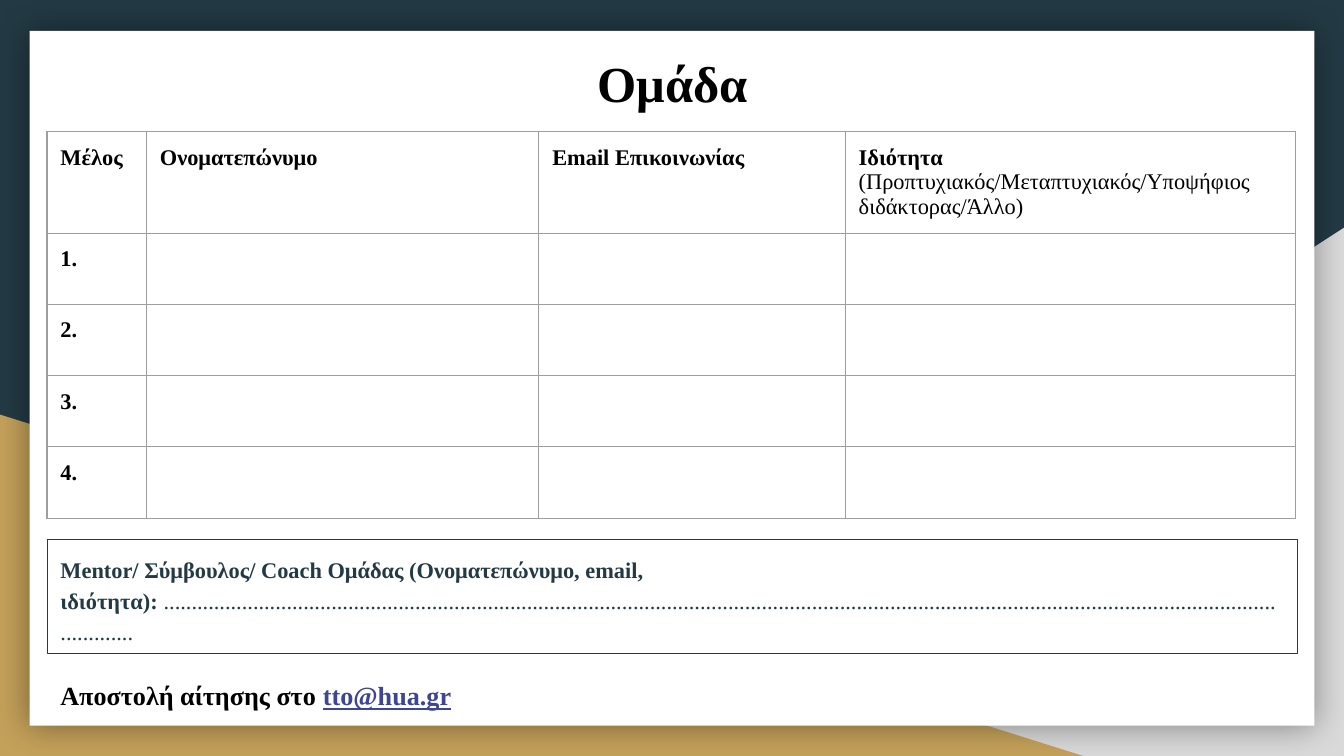
from lxml.etree import SubElement
from pptx import Presentation
from pptx.dml.color import RGBColor
from pptx.enum.shapes import MSO_SHAPE as Preset
from pptx.enum.text import MSO_ANCHOR as Anchor, MSO_AUTO_SIZE as AutoSize, PP_ALIGN as Align
from pptx.oxml import parse_xml
from pptx.oxml.ns import nsdecls, qn
from pptx.util import Inches, Pt

NAVY, GOLD, GREY, WHITE, BLACK = "233A44", "C4A15A", "D9D9D9", "FFFFFF", "000000"
LINK, RULE = "3D4594", "9E9E9E"
FONT = "Times New Roman"
MARGIN, CONTENT_W = 0.35, 9.3
INSETS = {f"margin_{side}": Inches(0.1) for side in ("left", "right", "top", "bottom")}
HEADERS = ["Μέλος", "Ονοματεπώνυμο", "Email Επικοινωνίας", "Ιδιότητα "]
ROLES = "(Προπτυχιακός/Μεταπτυχιακός/Υποψήφιος διδάκτορας/Άλλο)"
COLUMN_WIDTHS = [0.74, 2.92, 2.28, 3.35]
MEMBERS = 4
HEADER_H, MEMBER_H = 0.45, 0.53


def rgb(color):
    return RGBColor.from_string(color)


def apply(target, values):
    for name, value in values.items():
        setattr(target, name, value)


def place(shape, box):
    apply(shape, dict(zip(("left", "top", "width", "height"), map(Inches, box))))


def write(paragraph, wording, color=BLACK, size=12, bold=True, underline=False):
    run = paragraph.add_run()
    run.text = wording
    apply(run.font, {"name": FONT, "size": Pt(size), "bold": bold, "underline": underline})
    run.font.color.rgb = rgb(color)


def add_panel(slide, preset, box, color):
    panel = slide.shapes.add_shape(preset, *map(Inches, box))
    panel.shadow.inherit = False
    panel.fill.solid()
    panel.fill.fore_color.rgb = rgb(color)
    panel.line.fill.background()
    return panel


def add_backdrop(slide, width, height):
    slide.background.fill.solid()
    slide.background.fill.fore_color.rgb = rgb(NAVY)
    grey_corner = add_panel(slide, Preset.RIGHT_TRIANGLE,
                            (width - 6.08, height - 3.93, 6.08, 3.93), GREY)
    grey_corner._element.spPr.find(qn("a:xfrm")).set("flipH", "1")
    add_panel(slide, Preset.RIGHT_TRIANGLE, (0, height - 2.54, 8.06, 2.54), GOLD)
    card = add_panel(slide, Preset.RECTANGLE, (0.22, 0.23, 9.56, 5.17), WHITE)
    effects = card._element.spPr.find(qn("a:effectLst"))
    effects.append(parse_xml(
        f'<a:outerShdw {nsdecls("a")} blurRad="{Pt(18)}" dist="0" dir="0" rotWithShape="0">'
        f'<a:srgbClr val="{BLACK}"><a:alpha val="40000"/></a:srgbClr></a:outerShdw>'))


def bring_forward(slide, placeholder, box):
    slide.shapes._spTree.append(placeholder._element)
    place(placeholder, box)
    frame = placeholder.text_frame
    apply(frame, {**INSETS, "word_wrap": True, "auto_size": AutoSize.NONE,
                  "vertical_anchor": Anchor.TOP})
    return frame.paragraphs[0]


def add_heading(slide, box):
    heading = bring_forward(slide, slide.shapes.title, box)
    heading.alignment = Align.CENTER
    write(heading, "Ομάδα", size=27)


def add_mentor(slide, box):
    field = slide.placeholders[1]
    mentor = bring_forward(slide, field, box)
    field.line.color.rgb = rgb(NAVY)
    field.line.width = Pt(0.25)
    properties = mentor._p.get_or_add_pPr()
    apply(mentor, {"line_spacing": 1.15, "space_before": Pt(0), "space_after": Pt(12)})
    properties.set("marL", "0")
    properties.set("indent", "0")
    SubElement(properties, qn("a:buNone"))
    write(mentor, "Mentor/ Σύμβουλος/ Coach Ομάδας (Ονοματεπώνυμο, email, ιδιότητα): ", NAVY)
    write(mentor, "." * 212, NAVY, bold=False)


def format_cell(cell):
    apply(cell, INSETS)
    cell.fill.background()
    properties = cell._tc.get_or_add_tcPr()
    for position, edge in enumerate(("lnL", "lnR", "lnT", "lnB")):
        properties.insert(position, parse_xml(
            f'<a:{edge} {nsdecls("a")} w="{Pt(0.75)}"><a:solidFill>'
            f'<a:srgbClr val="{RULE}"/></a:solidFill></a:{edge}>'))


def add_members(slide, box):
    grid = slide.shapes.add_table(MEMBERS + 1, len(HEADERS), *map(Inches, box)).table
    apply(grid, {"first_row": False, "horz_banding": False})
    for column, width in zip(grid.columns, COLUMN_WIDTHS):
        column.width = Inches(width)
    for row, height in zip(grid.rows, [HEADER_H] + [MEMBER_H] * MEMBERS):
        row.height = Inches(height)
    for cell in grid.iter_cells():
        format_cell(cell)
    for index, header in enumerate(HEADERS):
        write(grid.cell(0, index).text_frame.paragraphs[0], header)
    write(grid.cell(0, len(HEADERS) - 1).text_frame.paragraphs[0], ROLES, bold=False)
    for number in range(1, MEMBERS + 1):
        write(grid.cell(number, 0).text_frame.paragraphs[0], f"{number}.")


def add_submission(slide, box):
    frame = slide.shapes.add_textbox(*map(Inches, box)).text_frame
    apply(frame, {"word_wrap": True, "auto_size": AutoSize.SHAPE_TO_FIT_TEXT})
    submission = frame.paragraphs[0]
    write(submission, "Αποστολή αίτησης στο ", size=14)
    write(submission, "tto@hua.gr", LINK, size=14, underline=True)
    write(submission, " ", size=14)


def main():
    width = 10
    height = width * 9 / 16
    deck = Presentation()
    apply(deck, {"slide_width": Inches(width), "slide_height": Inches(height)})
    slide = deck.slides.add_slide(deck.slide_layouts[1])
    add_backdrop(slide, width, height)
    add_heading(slide, (0.9, 0.29, 8.21, 0.69))
    add_mentor(slide, (MARGIN, 4.01, CONTENT_W, 0.85))
    add_members(slide, (MARGIN, 0.98, CONTENT_W, 2.92))
    add_submission(slide, (MARGIN, 5.01, 3.22, 0.34))
    deck.save("out.pptx")


if __name__ == "__main__":
    main()
